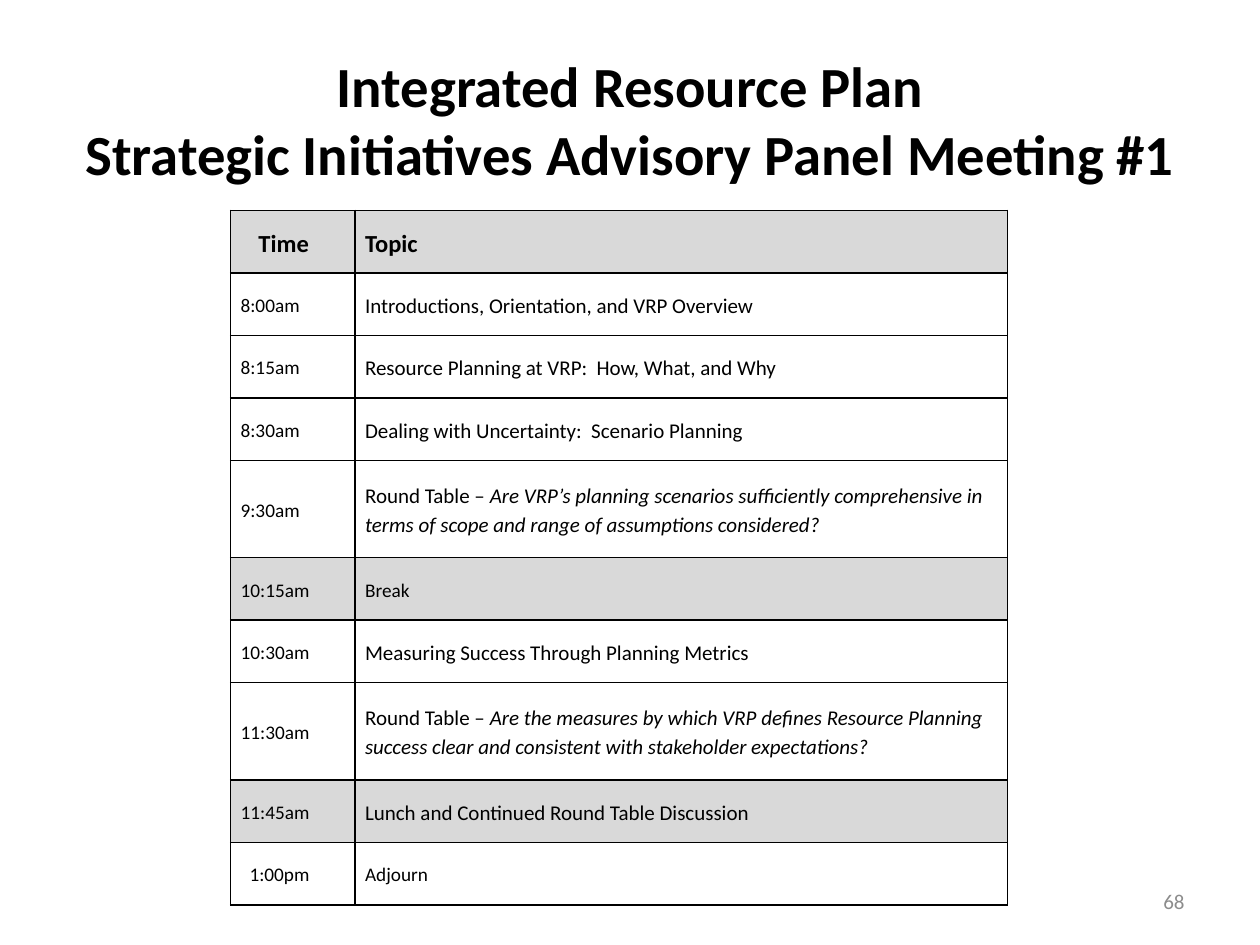
from dataclasses import dataclass

from lxml import etree
from pptx import Presentation, util as u
from pptx.dml.color import RGBColor
from pptx.enum import text as t
from pptx.oxml import ns

BLACK = RGBColor(0x00, 0x00, 0x00)
SHADE = RGBColor(0xD9, 0xD9, 0xD9)
PAGE_GREY = RGBColor(0x8C, 0x8C, 0x8C)
FONT = "Calibri"
COLUMN_WIDTHS = (2.51, 13.15)
ROW_HEIGHT, TALL_ROW_HEIGHT = 1.26, 1.96


@dataclass
class AgendaRow:
    time: str
    topic: str
    question: str = ""
    time_size: float = 11
    topic_size: float = 12
    bold: bool = False
    shaded: bool = False
    time_indent: float = 0


AGENDA = [
    AgendaRow("Time", "Topic", time_size=14, topic_size=14, bold=True,
              shaded=True, time_indent=0.36),
    AgendaRow("8:00am", "Introductions, Orientation, and VRP Overview"),
    AgendaRow("8:15am", "Resource Planning at VRP:  How, What, and Why"),
    AgendaRow("8:30am", "Dealing with Uncertainty:  Scenario Planning"),
    AgendaRow("9:30am", "Round Table – ",
              "Are VRP’s planning scenarios sufficiently comprehensive in "
              "terms of scope and range of assumptions considered?"),
    AgendaRow("10:15am", "Break", topic_size=11, shaded=True),
    AgendaRow("10:30am", "Measuring Success Through Planning Metrics"),
    AgendaRow("11:30am", "Round Table – ",
              "Are the measures by which VRP defines Resource Planning "
              "success clear and consistent with stakeholder expectations?"),
    AgendaRow("11:45am", "Lunch and Continued Round Table Discussion",
              shaded=True),
    AgendaRow("1:00pm", "Adjourn", topic_size=11, time_indent=0.18),
]


def style_font(font, size: float, color: RGBColor = BLACK, **formats) -> None:
    font.color.rgb = color
    values = {"name": FONT, "size": u.Pt(size), **formats}
    for attribute, value in values.items():
        setattr(font, attribute, value)


def add_borders(cell) -> None:
    properties = cell._tc.get_or_add_tcPr()
    for side in ("lnL", "lnR", "lnT", "lnB"):
        line = etree.SubElement(properties, ns.qn(f"a:{side}"), w=str(u.Pt(1)))
        fill = etree.SubElement(line, ns.qn("a:solidFill"))
        etree.SubElement(fill, ns.qn("a:srgbClr"), val=str(BLACK))


def fill_cell(cell, row: AgendaRow, runs: list[tuple[str, bool]],
              size: float, indent: float = 0) -> None:
    """Write (wording, italic) runs into a bordered agenda cell."""
    add_borders(cell)
    if row.shaded:
        cell.fill.solid()
        cell.fill.fore_color.rgb = SHADE
    else:
        cell.fill.background()
    layout = {"vertical_anchor": t.MSO_ANCHOR.MIDDLE,
              "margin_left": u.Cm(0.2), "margin_right": u.Cm(0.2),
              "margin_top": 0, "margin_bottom": 0}
    for attribute, value in layout.items():
        setattr(cell, attribute, value)
    paragraph = cell.text_frame.paragraphs[0]
    paragraph.line_spacing = 1.15
    paragraph.space_after = u.Pt(10)
    if indent:
        paragraph._p.get_or_add_pPr().set("indent", str(u.Cm(indent)))
    for wording, italic in runs:
        run = paragraph.add_run()
        run.text = wording
        style_font(run.font, size, bold=row.bold, italic=italic)


def add_agenda(slide) -> None:
    heights = [TALL_ROW_HEIGHT if row.question else ROW_HEIGHT for row in AGENDA]
    table = slide.shapes.add_table(
        len(AGENDA), len(COLUMN_WIDTHS), u.Cm(4.65), u.Cm(4.24),
        u.Cm(sum(COLUMN_WIDTHS)), u.Cm(sum(heights))).table
    table.first_row = table.horz_banding = False
    for column, width in zip(table.columns, COLUMN_WIDTHS):
        column.width = u.Cm(width)
    for index, (row, height) in enumerate(zip(AGENDA, heights)):
        table.rows[index].height = u.Cm(height)
        topic = [(row.topic, False)]
        if row.question:
            topic.append((row.question, True))
        fill_cell(table.cell(index, 0), row, [(row.time, False)],
                  row.time_size, row.time_indent)
        fill_cell(table.cell(index, 1), row, topic, row.topic_size)


def write_text(shape, wording: str, alignment: t.PP_ALIGN, size: float,
               color: RGBColor = BLACK, bold: bool = False) -> None:
    frame = shape.text_frame
    frame.text = wording
    frame.word_wrap = True
    frame.auto_size = t.MSO_AUTO_SIZE.NONE
    frame.vertical_anchor = t.MSO_ANCHOR.MIDDLE
    paragraph = frame.paragraphs[0]
    paragraph.alignment = alignment
    for run in paragraph.runs:
        style_font(run.font, size, color, bold=bold)


def main() -> None:
    deck = Presentation()
    deck.slide_width, deck.slide_height = u.Cm(25.4), u.Cm(19.05)
    slide = deck.slides.add_slide(deck.slide_layouts[5])

    title = slide.shapes.title
    title.left, title.top = u.Cm(1.27), u.Cm(0.84)
    title.width, title.height = u.Cm(22.86), u.Cm(3.1)
    write_text(title, "Integrated Resource Plan\v"
               "Strategic Initiatives Advisory Panel Meeting #1",
               t.PP_ALIGN.CENTER, 32.4, bold=True)

    page_number = slide.shapes.add_textbox(
        u.Cm(18.21), u.Cm(17.65), u.Cm(5.92), u.Cm(1.02))
    write_text(page_number, "68", t.PP_ALIGN.RIGHT, 12, PAGE_GREY)

    add_agenda(slide)
    deck.save("out.pptx")


if __name__ == "__main__":
    main()
